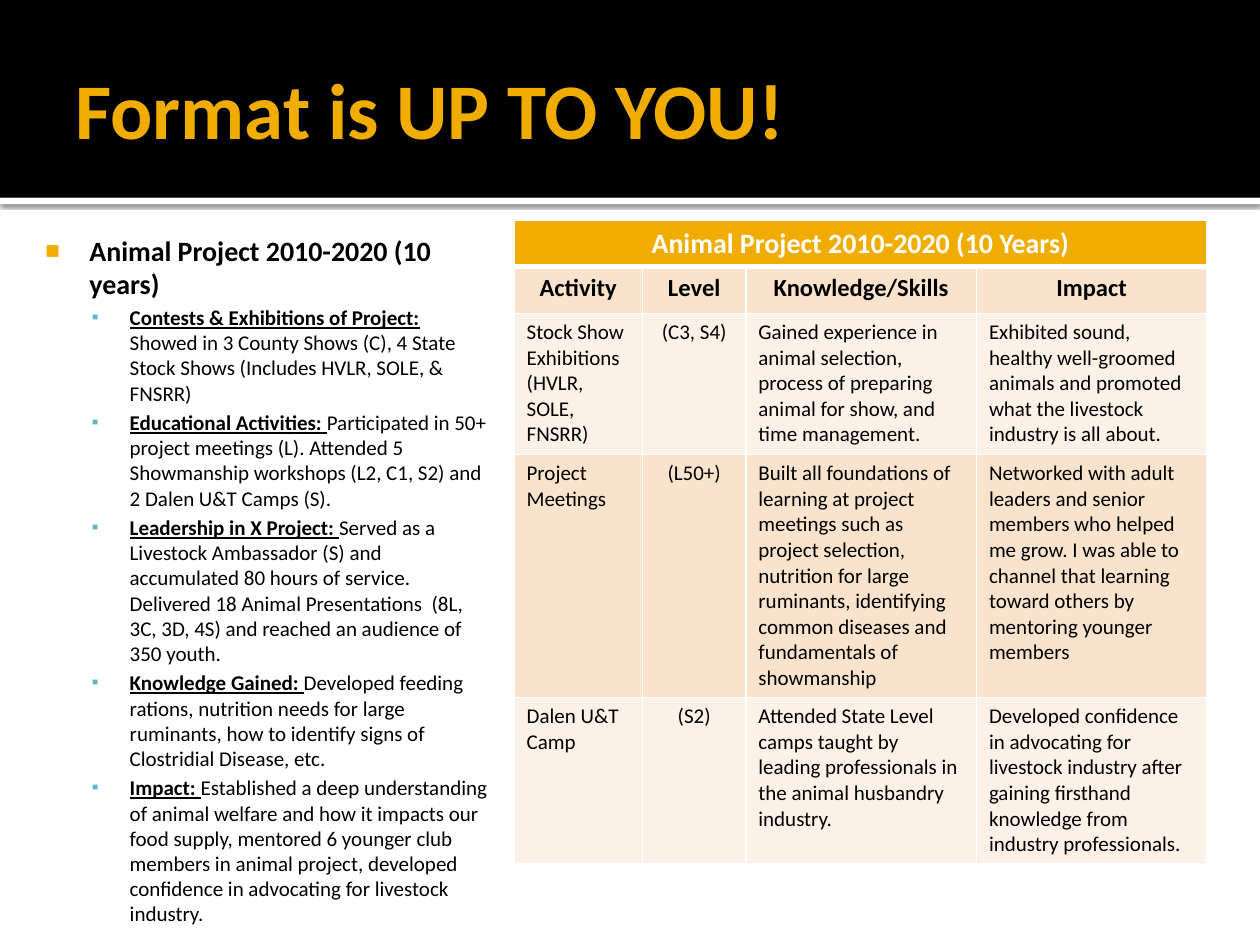
import dataclasses

import lxml.etree
import pptx
import pptx.dml.color
import pptx.enum.shapes
import pptx.enum.text
import pptx.oxml.ns
import pptx.util

Inches = pptx.util.Inches
Pt = pptx.util.Pt
RGB = pptx.dml.color.RGBColor.from_string
qn = pptx.oxml.ns.qn
ALIGN = pptx.enum.text.PP_ALIGN
ANCHOR = pptx.enum.text.MSO_ANCHOR


@dataclasses.dataclass(frozen=True)
class Theme:
    font: str = "Calibri"
    gold: str = "F0AD00"
    blue: str = "60B5CC"
    black: str = "000000"
    white: str = "FFFFFF"
    band_dark: str = "F9E3CC"
    band_light: str = "FCF1E7"
    title: int = 45
    heading: int = 16
    column_head: int = 14
    body: int = 12


THEME = Theme()

TITLE = "Format is UP TO YOU!"
HEADING = "Animal Project 2010-2020 (10 years)"
POINTS = [
    ("Contests & Exhibitions of Project: ",
     "Showed in 3 County Shows (C), 4 State Stock Shows (Includes HVLR, SOLE, & FNSRR)"),
    ("Educational Activities: ",
     "Participated in 50+ project meetings (L). Attended 5 Showmanship workshops "
     "(L2, C1, S2) and 2 Dalen U&T Camps (S)."),
    ("Leadership in X Project: ",
     "Served as a Livestock Ambassador (S) and accumulated 80 hours of service. "
     "Delivered 18 Animal Presentations  (8L, 3C, 3D, 4S) and reached an audience of 350 youth."),
    ("Knowledge Gained: ",
     "Developed feeding rations, nutrition needs for large ruminants, how to identify "
     "signs of Clostridial Disease, etc."),
    ("Impact: ",
     "Established a deep understanding of animal welfare and how it impacts our food supply, "
     "mentored 6 younger club members in animal project, developed  confidence in advocating "
     "for livestock industry."),
]

TABLE_TITLE = "Animal Project 2010-2020 (10 Years)"
TABLE_ROWS = [
    ("Activity", "Level", "Knowledge/Skills", "Impact"),
    ("Stock Show Exhibitions (HVLR, SOLE, FNSRR)", "(C3, S4)",
     "Gained experience in animal selection, process of preparing animal for show, "
     "and time management.",
     "Exhibited sound, healthy well-groomed animals and promoted what the livestock "
     "industry is all about."),
    ("Project Meetings", "(L50+)",
     "Built all foundations of learning at project meetings such as project selection, "
     "nutrition for large ruminants, identifying common diseases and fundamentals of showmanship",
     "Networked with adult leaders and senior members who helped me grow. I was able to "
     "channel that learning toward others by mentoring younger members"),
    ("Dalen U&T Camp", "(S2)",
     "Attended State Level camps taught by leading professionals in the animal husbandry industry.",
     "Developed confidence in advocating for livestock industry after gaining firsthand "
     "knowledge from industry professionals."),
]
COLUMN_WIDTHS = (1.02, 0.82, 1.83, 1.83)
ROW_HEIGHTS = (0.36, 0.37, 1.12, 1.93, 1.32)


def set_attrs(obj, values):
    for name, value in values.items():
        setattr(obj, name, value)


def add_run(p, text, size, color, bold=False, underline=False):
    r = p.add_run()
    r.text = text
    set_attrs(r.font, {"name": THEME.font, "size": Pt(size), "bold": bold,
                       "underline": underline})
    r.font.color.rgb = RGB(color)


def add_band(s, top, height, color):
    sp = s.shapes.add_shape(pptx.enum.shapes.MSO_SHAPE.RECTANGLE,
                            0, Inches(top), Inches(10), Inches(height))
    sp.shadow.inherit = False
    sp.fill.solid()
    sp.fill.fore_color.rgb = RGB(color)
    sp.line.fill.background()
    return sp


def add_shadow(sp, blur, distance, opacity):
    effects = sp._element.spPr.find(qn("a:effectLst"))
    shadow = lxml.etree.SubElement(
        effects, qn("a:outerShdw"), blurRad=str(Pt(blur)), dist=str(Pt(distance)),
        dir="5400000", algn="t", rotWithShape="0")
    color = lxml.etree.SubElement(shadow, qn("a:srgbClr"), val=THEME.black)
    lxml.etree.SubElement(color, qn("a:alpha"), val=str(opacity * 1000))


def add_text_frame(s, box, margins, anchor):
    tf = s.shapes.add_textbox(*(Inches(v) for v in box)).text_frame
    sides = ("margin_left", "margin_top", "margin_right", "margin_bottom")
    set_attrs(tf, {"word_wrap": True, "vertical_anchor": anchor,
                   **{side: Inches(m) for side, m in zip(sides, margins)}})
    return tf


def set_bullet(p, char, color, percent, left, hanging):
    pPr = p._p.get_or_add_pPr()
    pPr.set("marL", str(Inches(left)))
    pPr.set("indent", str(-Inches(hanging)))
    bullet_color = lxml.etree.SubElement(pPr, qn("a:buClr"))
    lxml.etree.SubElement(bullet_color, qn("a:srgbClr"), val=color)
    lxml.etree.SubElement(pPr, qn("a:buSzPct"), val=str(percent * 1000))
    lxml.etree.SubElement(pPr, qn("a:buFont"), typeface=THEME.font)
    lxml.etree.SubElement(pPr, qn("a:buChar"), char=char)


def add_outline(s):
    tf = add_text_frame(s, (0.17, 1.75, 3.83, 5.67), (0.06, 0.1, 0.1, 0.05), ANCHOR.TOP)
    p = tf.paragraphs[0]
    set_bullet(p, "■", THEME.gold, 55, 0.48, 0.35)
    add_run(p, HEADING, THEME.heading, THEME.black, bold=True)
    for label, detail in POINTS:
        p = tf.add_paragraph()
        set_attrs(p, {"level": 1, "space_before": Pt(0.2 * THEME.body)})
        set_bullet(p, "▪", THEME.blue, 90, 0.8, 0.3)
        add_run(p, label, THEME.body, THEME.black, bold=True, underline=True)
        add_run(p, detail, THEME.body, THEME.black)


def set_borders(cell, bottom):
    tcPr = cell._tc.get_or_add_tcPr()
    for i, (side, width) in enumerate((("L", 1), ("R", 1), ("T", 1), ("B", bottom))):
        line = lxml.etree.Element(qn(f"a:ln{side}"), w=str(Pt(width)))
        fill = lxml.etree.SubElement(line, qn("a:solidFill"))
        lxml.etree.SubElement(fill, qn("a:srgbClr"), val=THEME.white)
        tcPr.insert(i, line)


def style_cell(cell, fill, bottom=1):
    cell.fill.solid()
    cell.fill.fore_color.rgb = RGB(fill)
    set_borders(cell, bottom)


def fill_cell(cell, text, size, color, bold, centered):
    p = cell.text_frame.paragraphs[0]
    p.alignment = ALIGN.CENTER if centered else ALIGN.LEFT
    add_run(p, text, size, color, bold)


def add_project_table(s):
    frame = s.shapes.add_table(len(ROW_HEIGHTS), len(COLUMN_WIDTHS), Inches(4.08), Inches(1.75),
                               Inches(sum(COLUMN_WIDTHS)), Inches(sum(ROW_HEIGHTS)))
    table = frame.table
    for column, width in zip(table.columns, COLUMN_WIDTHS):
        column.width = Inches(width)
    for row, height in zip(table.rows, ROW_HEIGHTS):
        row.height = Inches(height)
    for cell in table.rows[0].cells:
        style_cell(cell, THEME.gold, bottom=3)
    table.cell(0, 0).merge(table.cell(0, len(COLUMN_WIDTHS) - 1))
    fill_cell(table.cell(0, 0), TABLE_TITLE, THEME.heading, THEME.white, True, True)
    for i, texts in enumerate(TABLE_ROWS):
        is_head = i == 0
        size = THEME.column_head if is_head else THEME.body
        for j, text in enumerate(texts):
            cell = table.cell(i + 1, j)
            style_cell(cell, THEME.band_light if i % 2 else THEME.band_dark)
            fill_cell(cell, text, size, THEME.black, is_head, is_head or j == 1)


def main():
    prs = pptx.Presentation()
    set_attrs(prs, {"slide_width": Inches(10), "slide_height": Inches(7.5)})
    s = prs.slides.add_slide(prs.slide_layouts[6])
    add_shadow(add_band(s, 1.57, 0.05, THEME.white), 2.5, 0.8, 60)
    add_band(s, 0, 1.57, THEME.black)
    tf = add_text_frame(s, (0.5, 0.17, 9, 1.37), (0.1, 0.05, 0.05, 0.05), ANCHOR.MIDDLE)
    add_run(tf.paragraphs[0], TITLE, THEME.title, THEME.gold, bold=True)
    add_outline(s)
    add_project_table(s)
    prs.save("out.pptx")


if __name__ == "__main__":
    main()
